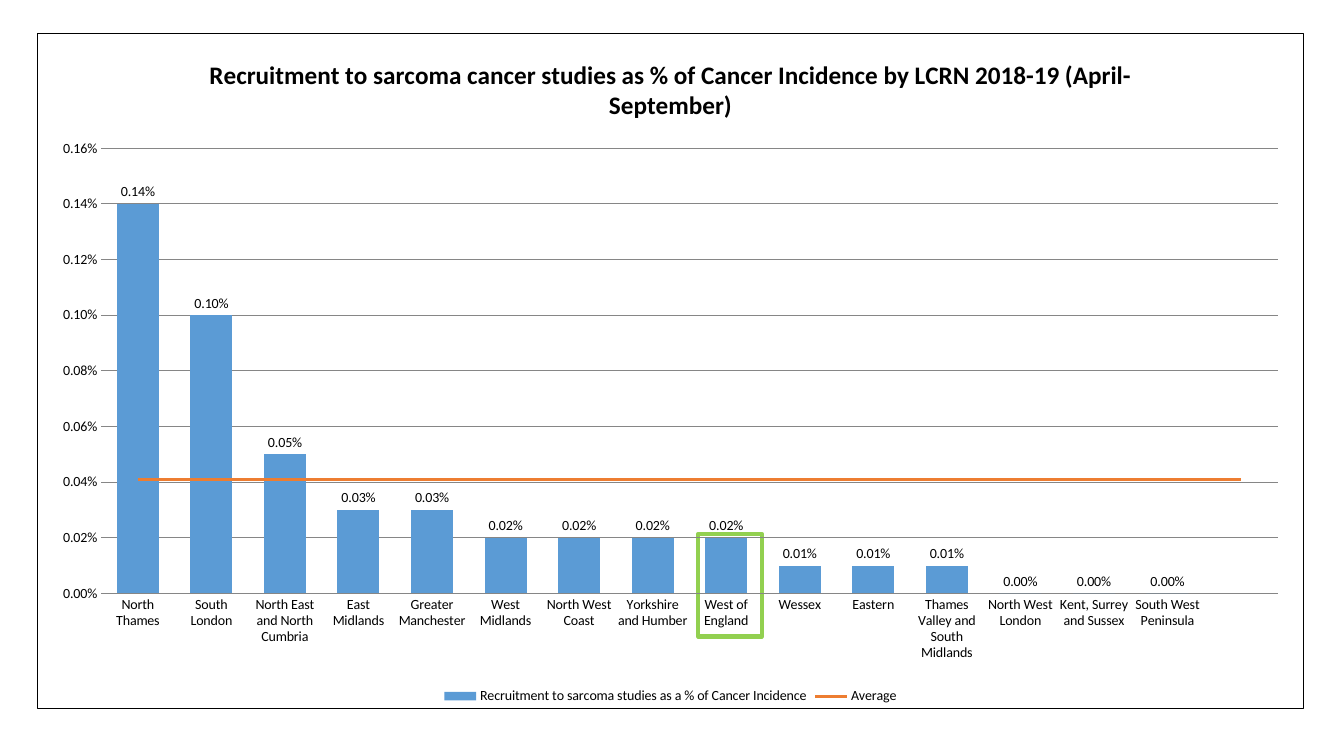
from dataclasses import dataclass

from lxml import etree
from pptx import Presentation
from pptx.chart.data import CategoryChartData as Data
from pptx.dml.color import RGBColor as Rgb
from pptx.enum.chart import XL_CHART_TYPE as Kind
from pptx.enum.chart import XL_LABEL_POSITION as Spot
from pptx.enum.chart import XL_LEGEND_POSITION as Side
from pptx.enum.chart import XL_MARKER_STYLE as Mark
from pptx.enum.chart import XL_TICK_MARK as Tick
from pptx.enum.shapes import MSO_SHAPE as Shape
from pptx.oxml import parse_xml
from pptx.oxml.ns import nsdecls, qn
from pptx.util import Inches, Pt


@dataclass(frozen=True)
class Theme:
    """Hold the colours, font and type sizes of the slide."""
    bar: str = "5B9BD5"
    mean: str = "ED7D31"
    mark: str = "92D050"
    grid: str = "868686"
    ink: str = "000000"
    font: str = "Calibri"
    head: int = 18
    body: int = 10


LOOK = Theme()
FORM = "0.00%"
TITLE = ("Recruitment to sarcoma cancer studies as % of Cancer Incidence "
         "by LCRN 2018-19 (April-September)")
RATES = {
    "North Thames": 0.0014,
    "South London": 0.001,
    "North East and North Cumbria": 0.0005,
    "East Midlands": 0.0003,
    "Greater Manchester": 0.0003,
    "West Midlands": 0.0002,
    "North West Coast": 0.0002,
    "Yorkshire and Humber": 0.0002,
    "West of England": 0.0002,
    "Wessex": 0.0001,
    "Eastern": 0.0001,
    "Thames Valley and South Midlands": 0.0001,
    "North West London": 0,
    "Kent, Surrey and Sussex": 0,
    "South West Peninsula": 0,
    "": None,
}
MEAN = 0.00041


def style(font, size=LOOK.body, bold=False, color=LOOK.ink):
    """Format a font."""
    font.name, font.size, font.bold = LOOK.font, Pt(size), bold
    font.color.rgb = Rgb.from_string(color)


def write(frame, text, **form):
    """Put formatted text in a text frame."""
    frame.text = text
    style(frame.paragraphs[0].runs[0].font, **form)


def stroke(line, color, width):
    """Colour a line and set its width in points."""
    line.color.rgb = Rgb.from_string(color)
    line.width = Pt(width)


def split(chart):
    """Move the second bar series to a line plot on the same axes."""
    bars = chart.plots[0]._element
    row = bars.findall(qn("c:ser"))[1]
    for flag in row.findall(qn("c:invertIfNegative")):
        row.remove(flag)
    plot = parse_xml(f'<c:lineChart {nsdecls("c")}><c:grouping val="standard"/>'
                     '<c:varyColors val="0"/><c:marker val="1"/></c:lineChart>')
    plot.insert(2, row)
    for axis in bars.findall(qn("c:axId")):
        etree.SubElement(plot, qn("c:axId")).set("val", axis.get("val"))
    bars.addnext(plot)


def frame(chart, left, top, width, height):
    """Border the chart and place its plot by fractions of the chart box."""
    root = chart._chartSpace.find(qn("c:chart"))
    root.addnext(parse_xml(
        f'<c:spPr {nsdecls("c", "a")}><a:noFill/><a:ln w="{Pt(0.75)}"><a:solidFill>'
        f'<a:srgbClr val="{LOOK.ink}"/></a:solidFill></a:ln></c:spPr>'))
    area = root.find(qn("c:plotArea"))
    for old in area.findall(qn("c:layout")):
        area.remove(old)
    size = "".join(f'<c:{key} val="{val}"/>' for key, val in
                   zip("xywh", (left, top, width, height)))
    area.insert(0, parse_xml(
        f'<c:layout {nsdecls("c")}><c:manualLayout><c:layoutTarget val="inner"/>'
        f'<c:xMode val="edge"/><c:yMode val="edge"/>{size}'
        '</c:manualLayout></c:layout>'))


def axes(chart):
    """Format both axes and the grid."""
    cat, val = chart.category_axis, chart.value_axis
    for axis in (cat, val):
        axis.major_tick_mark = axis.minor_tick_mark = Tick.NONE
        style(axis.tick_labels.font)
    stroke(cat.format.line, LOOK.grid, 0.75)
    val.format.line.fill.background()
    val.has_major_gridlines = True
    stroke(val.major_gridlines.format.line, LOOK.grid, 0.75)
    val.minimum_scale, val.maximum_scale, val.major_unit = 0, 0.0016, 0.0002
    val.tick_labels.number_format = FORM
    val.tick_labels.number_format_is_linked = False


def series(chart):
    """Format the bars, their labels and the average line."""
    split(chart)
    bars, lines = chart.plots
    bars.gap_width, bars.overlap, bars.vary_by_categories = 75, -25, False
    row = bars.series[0]
    row.format.fill.solid()
    row.format.fill.fore_color.rgb = Rgb.from_string(LOOK.bar)
    tags = row.data_labels
    tags.show_value, tags.position = True, Spot.OUTSIDE_END
    tags.number_format, tags.number_format_is_linked = FORM, False
    style(tags.font)
    mean = lines.series[0]
    mean.smooth, mean.marker.style = False, Mark.NONE
    stroke(mean.format.line, LOOK.mean, 2.25)


def graph(slide, left, top, width, height):
    """Draw the recruitment chart in the given box."""
    data = Data(number_format=FORM)
    data.categories = list(RATES)
    data.add_series("Recruitment to sarcoma studies as a % of Cancer Incidence",
                    list(RATES.values()))
    data.add_series("Average", [MEAN] * len(RATES))
    chart = slide.shapes.add_chart(
        Kind.COLUMN_CLUSTERED, Inches(left), Inches(top),
        Inches(width), Inches(height), data).chart
    style(chart.font)
    chart.has_title = True
    write(chart.chart_title.text_frame, TITLE, size=LOOK.head, bold=True)
    chart.chart_title.include_in_layout = False
    chart.has_legend = True
    chart.legend.position = Side.BOTTOM
    chart.legend.include_in_layout = False
    style(chart.legend.font)
    series(chart)
    axes(chart)
    frame(chart, 0.05, 0.17, 0.93, 0.66)


def focus(slide, left, top, width, height):
    """Outline one region of the chart in the given box, turned on its side."""
    box = slide.shapes.add_shape(Shape.RECTANGLE, Inches(left), Inches(top),
                                 Inches(width), Inches(height))
    box.rotation = 90
    box.shadow.inherit = False
    box.fill.background()
    stroke(box.line, LOOK.mark, 3)


def main():
    """Build and save the slide."""
    deck = Presentation()
    deck.slide_width, deck.slide_height = Inches(13.33), Inches(7.5)
    slide = deck.slides.add_slide(deck.slide_layouts[6])
    focus(slide, 6.73, 5.49, 1.02, 0.63)
    graph(slide, 0.37, 0.33, 12.56, 6.7)
    deck.save("out.pptx")


if __name__ == "__main__":
    main()
